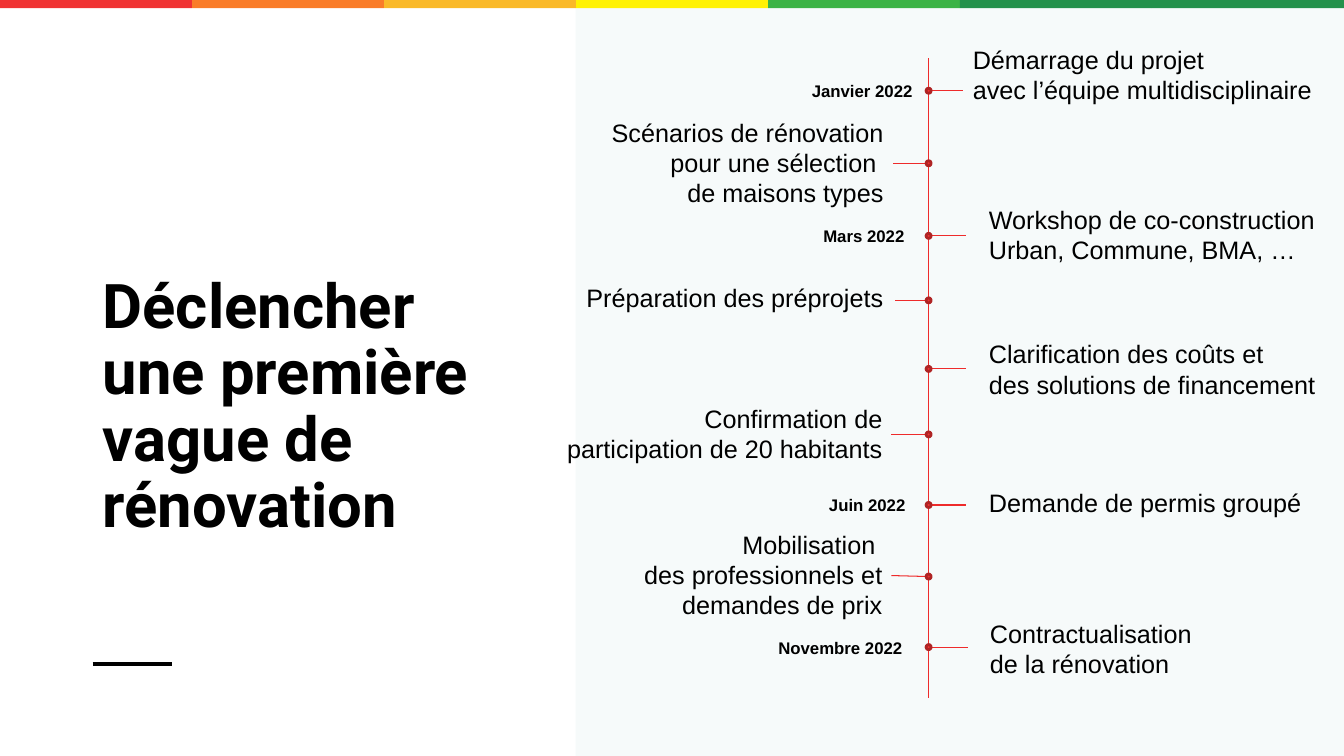
from lxml import etree
from pptx import Presentation
from pptx.dml.color import RGBColor
from pptx.enum import shapes as sh, text as tx
from pptx.oxml.ns import qn
from pptx.util import Inches, Pt

COLORS = {
    "black": "000000", "panel": "F6FAFA", "axis": "EE2B2B",
    "dot": "F03232", "ring": "AF2424",
    "red": "F03232", "orange": "FA7C28", "amber": "FAB928",
    "yellow": "FFF203", "green": "3BB345", "forest": "23914B",
}
BANDS = ["red", "orange", "amber", "yellow", "green", "forest", "forest"]
AXIS = 9.21
DOT = 0.05
LEFT, RIGHT = tx.PP_ALIGN.LEFT, tx.PP_ALIGN.RIGHT

# Dot centre, far end of the branch (x, y), text box, alignment, wording
STEPS = [
    (0.9, (9.55, 0.9), (9.55, 0.39, 3.6, 0.71), LEFT,
     "Démarrage du projet\navec l’équipe multidisciplinaire"),
    (1.62, (8.86, 1.62), (5.94, 1.11, 2.92, 1.01), RIGHT,
     "Scénarios de rénovation\vpour une sélection \vde maisons types"),
    (2.34, (9.58, 2.34), (9.71, 1.98, 3.47, 0.71), LEFT,
     "Workshop de co-construction\nUrban, Commune, BMA, …"),
    (2.98, (8.88, 2.98), (5.6, 2.75, 3.26, 0.4), RIGHT,
     "Préparation des préprojets"),
    (3.66, (9.58, 3.66), (9.71, 3.31, 3.47, 0.71), LEFT,
     "Clarification des coûts et \vdes solutions de financement"),
    (4.31, (8.84, 4.31), (5.49, 3.95, 3.36, 0.71), RIGHT,
     "Confirmation de\vparticipation de 20 habitants"),
    (5.01, (9.58, 5.01), (9.71, 4.79, 3.33, 0.4), LEFT,
     "Demande de permis groupé"),
    (5.72, (8.84, 5.71), (6.26, 5.2, 2.59, 1.01), RIGHT,
     "Mobilisation \vdes professionnels et\vdemandes de prix"),
    (6.42, (9.6, 6.42), (9.72, 6.08, 2.29, 0.71), LEFT,
     "Contractualisation \vde la rénovation"),
]
DATES = [
    ((7.94, 0.75, 1.21, 0.3), "Janvier 2022"),
    ((8.06, 2.19, 1.01, 0.3), "Mars 2022"),
    ((8.11, 4.86, 0.97, 0.3), "Juin 2022"),
    ((7.61, 6.28, 1.44, 0.3), "Novembre 2022"),
]


def color(name):
    return RGBColor.from_string(COLORS[name])


def add_block(slide, kind, box, fill, ring=None):
    block = slide.shapes.add_shape(kind, *map(Inches, box))
    block.shadow.inherit = False
    block.fill.solid()
    block.fill.fore_color.rgb = color(fill)
    if ring:
        block.line.color.rgb = color(ring)
        block.line.width = Pt(2)
    else:
        block.line.fill.background()


def add_line(slide, start, end, name, width):
    line = slide.shapes.add_connector(
        sh.MSO_CONNECTOR.STRAIGHT, *map(Inches, (*start, *end)))
    line.line.color.rgb = color(name)
    line.line.width = Pt(width)
    etree.SubElement(line._element.spPr, qn("a:effectLst"))


def add_text(slide, box, words, size, align=LEFT, bold=False, face="Arial",
             anchor=tx.MSO_ANCHOR.TOP, space=1.0):
    frame = slide.shapes.add_textbox(*map(Inches, box)).text_frame
    frame.word_wrap = True
    frame.vertical_anchor = anchor
    frame.text = words
    for para in frame.paragraphs:
        para.alignment = align
        para.line_spacing = space
        para.font.name = face
        para.font.size = Pt(size)
        para.font.bold = bold
        para.font.color.rgb = color("black")


def add_step(slide, mid, tip, box, align, words):
    add_line(slide, (AXIS, mid), tip, "axis", 0.75)
    add_block(slide, sh.MSO_SHAPE.OVAL,
              (AXIS - DOT / 2, mid - DOT / 2, DOT, DOT), "dot", "ring")
    add_text(slide, box, words, 18, align)


def main():
    deck = Presentation()
    deck.slide_width, deck.slide_height = Inches(13.33), Inches(7.5)
    slide = deck.slides.add_slide(deck.slide_layouts[6])

    # Side panel and colour strip
    rect = sh.MSO_SHAPE.RECTANGLE
    add_block(slide, rect, (5.71, 0.08, 7.62, 7.42), "panel")
    wide = 13.33 / len(BANDS)
    for i, band in enumerate(BANDS):
        add_block(slide, rect, (i * wide, 0, wide, 0.08), band)

    # Title and its rule
    add_text(slide, (0.92, 2.28, 4.33, 3.54),
             "Déclencher une première vague de rénovation", 44, bold=True,
             face="Roboto", anchor=tx.MSO_ANCHOR.MIDDLE, space=0.9)
    add_line(slide, (0.92, 6.59), (1.71, 6.59), "black", 3)

    # Timeline
    add_line(slide, (AXIS, 0.58), (AXIS, 6.92), "axis", 0.75)
    for step in STEPS:
        add_step(slide, *step)
    for box, words in DATES:
        add_text(slide, box, words, 12, RIGHT, bold=True)

    deck.save("out.pptx")


if __name__ == "__main__":
    main()
